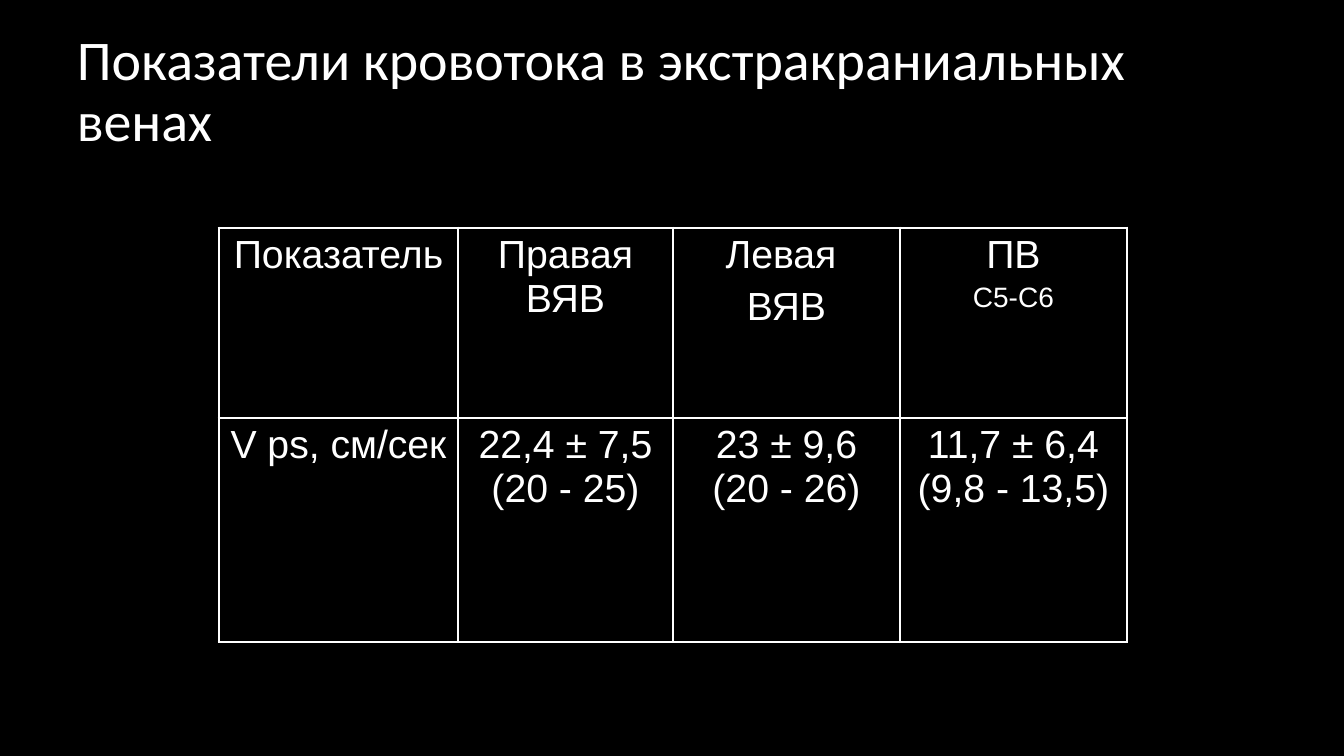
from lxml import etree
from pptx import Presentation
from pptx import util as u
from pptx.dml.color import RGBColor
from pptx.enum import text
from pptx.oxml.ns import qn

TITLE = "Показатели кровотока в экстракраниальных венах"
TITLE_BOX = (67, 30, 1210, 126)

# Each cell is a list of (paragraph, size in points)
ROWS = [
    [
        [("Показатель", 28)],
        [("Правая ВЯВ", 28)],
        [("Левая ", 28), ("ВЯВ", 28)],
        [("ПВ", 28), ("С5-С6", 20)],
    ],
    [
        [("V ps, см/сек", 28)],
        [("22,4 ± 7,5 (20 - 25)", 28)],
        [("23 ± 9,6 (20 - 26)", 28)],
        [("11,7 ± 6,4 (9,8 - 13,5)", 28)],
    ],
]
TABLE_LEFT, TABLE_TOP = 219, 228
COL_WIDTHS = [239, 215, 227, 227]
ROW_HEIGHTS = [190, 224]
OUTER_LINE, INNER_LINE = 2.25, 1

BLACK, WHITE = "000000", "FFFFFF"


def px(n):
    return u.Emu(round(n * 914400 / 100.8))


def color(value):
    return RGBColor.from_string(value)


def style(p, font, size):
    p.font.name = font
    p.font.size = u.Pt(size)
    p.font.color.rgb = color(WHITE)


def set_borders(cell, widths):
    """Draw white borders; widths are points for left, right, top, bottom."""
    tc_pr = cell._tc.get_or_add_tcPr()
    for i, (side, width) in enumerate(zip("LRTB", widths)):
        ln = etree.Element(qn(f"a:ln{side}"), w=str(u.Pt(width)))
        fill = etree.SubElement(ln, qn("a:solidFill"))
        etree.SubElement(fill, qn("a:srgbClr"), val=WHITE)
        tc_pr.insert(i, ln)


def add_title(slide):
    tf = slide.shapes.add_textbox(*map(px, TITLE_BOX)).text_frame
    tf.word_wrap = True
    tf.vertical_anchor = text.MSO_ANCHOR.MIDDLE
    p = tf.paragraphs[0]
    p.text = TITLE
    p.line_spacing = 0.9
    style(p, "Calibri", 40)


def fill_cell(cell, paragraphs):
    cell.fill.background()
    tf = cell.text_frame
    for i, (line, size) in enumerate(paragraphs):
        p = tf.add_paragraph() if i else tf.paragraphs[0]
        p.text = line
        p.alignment = text.PP_ALIGN.CENTER
        if i:
            p.space_before = u.Pt(0.2 * size)
        style(p, "Arial", size)


def add_flow_table(slide):
    n_rows, n_cols = len(ROWS), len(COL_WIDTHS)
    box = (TABLE_LEFT, TABLE_TOP, sum(COL_WIDTHS), sum(ROW_HEIGHTS))
    table = slide.shapes.add_table(n_rows, n_cols, *map(px, box)).table
    table.first_row = table.horz_banding = False
    for col, width in zip(table.columns, COL_WIDTHS):
        col.width = px(width)
    for row, height in zip(table.rows, ROW_HEIGHTS):
        row.height = px(height)
    for r, row in enumerate(ROWS):
        for c, paragraphs in enumerate(row):
            cell = table.cell(r, c)
            fill_cell(cell, paragraphs)
            on_edge = (c == 0, c == n_cols - 1, r == 0, r == n_rows - 1)
            set_borders(cell, [OUTER_LINE if e else INNER_LINE for e in on_edge])


def main():
    prs = Presentation()
    prs.slide_width, prs.slide_height = px(1344), px(756)
    slide = prs.slides.add_slide(prs.slide_layouts[6])
    slide.background.fill.solid()
    slide.background.fill.fore_color.rgb = color(BLACK)
    add_title(slide)
    add_flow_table(slide)
    prs.save("out.pptx")


if __name__ == "__main__":
    main()
